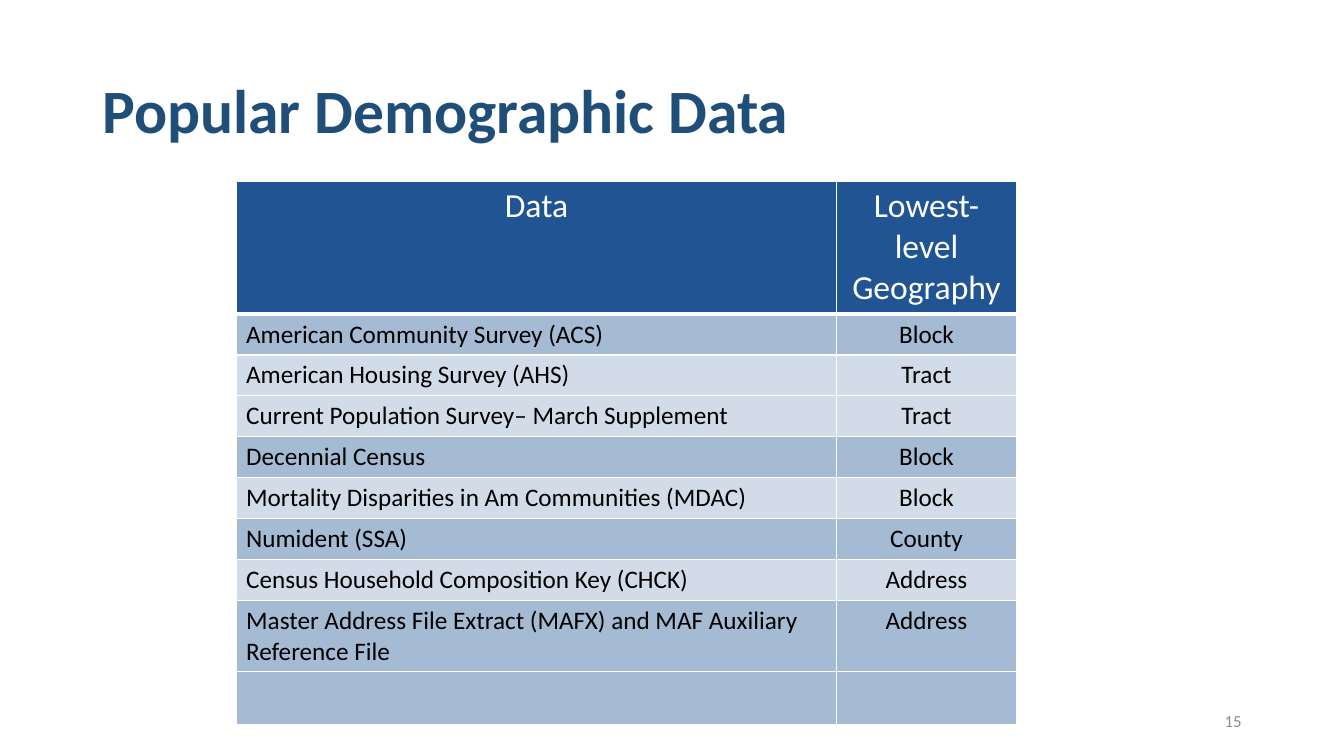
import pptx
import pptx.util
import pptx.dml.color
import pptx.enum.text
import pptx.oxml
from lxml import etree

Cm = pptx.util.Cm
Pt = pptx.util.Pt
Align = pptx.enum.text.PP_ALIGN
Anchor = pptx.enum.text.MSO_ANCHOR
NS = "http://schemas.openxmlformats.org/drawingml/2006/main"


def color(code):
    return pptx.dml.color.RGBColor.from_string(code)


def write(frame, text, align, size, code, bold=False):
    frame.text = text
    para = frame.paragraphs[0]
    para.alignment = align
    look = {"name": "Calibri", "size": Pt(size), "bold": bold}
    for key, value in look.items():
        setattr(para.font, key, value)
    para.font.color.rgb = color(code)
    return para


deck = pptx.Presentation()
deck.slide_width = Cm(33.87)
deck.slide_height = Cm(19.05)
slide = deck.slides.add_slide(deck.slide_layouts[5])

title = slide.shapes.title
place = {"left": Cm(2.33), "top": Cm(1.01), "width": Cm(29.21), "height": Cm(3.68)}
for key, value in place.items():
    setattr(title, key, value)
title.text_frame.vertical_anchor = Anchor.MIDDLE
head = write(title.text_frame, "Popular Demographic Data", Align.LEFT, 44, "1F4E79", True)
head.line_spacing = 0.9

rows = [
    ("Data", "Lowest-level Geography", 3.35, 100),
    ("American Community Survey (ACS)", "Block", 1.03, 40),
    ("American Housing Survey (AHS)", "Tract", 1.03, 20),
    ("Current Population Survey– March Supplement", "Tract", 1.03, 20),
    ("Decennial Census", "Block", 1.03, 40),
    ("Mortality Disparities in Am Communities (MDAC)", "Block", 1.03, 20),
    ("Numident (SSA)", "County", 1.03, 40),
    ("Census Household Composition Key (CHCK)", "Address", 1.03, 20),
    ("Master Address File Extract (MAFX) and MAF Auxiliary Reference File", "Address", 1.8, 40),
    ("", "", 1.32, 40),
]
high = sum(row[2] for row in rows)
frame = slide.shapes.add_table(len(rows), 2, Cm(5.95), Cm(4.56), Cm(19.66), Cm(high))
table = frame.table
for col, wide in zip(table.columns, (15.14, 4.52)):
    col.width = Cm(wide)

for r, (data, level, tall, alpha) in enumerate(rows):
    table.rows[r].height = Cm(tall)
    size, ink = (24, "FFFFFF") if r == 0 else (18, "000000")
    for c, text in enumerate((data, level)):
        cell = table.cell(r, c)
        align = Align.LEFT if r and c == 0 else Align.CENTER
        write(cell.text_frame, text, align, size, ink)
        props = cell._tc.get_or_add_tcPr()
        for side in ("lnL", "lnR", "lnT", "lnB"):
            width = 3 if r == 0 and side == "lnB" else 1
            props.append(pptx.oxml.parse_xml(
                f'<a:{side} xmlns:a="{NS}" w="{Pt(width)}"><a:solidFill>'
                f'<a:srgbClr val="FFFFFF"/></a:solidFill></a:{side}>'))
        cell.fill.solid()
        cell.fill.fore_color.rgb = color("205493")
        if alpha < 100:
            tint = props.find(f"{{{NS}}}solidFill/{{{NS}}}srgbClr")
            etree.SubElement(tint, f"{{{NS}}}alpha", val=str(alpha * 1000))

number = slide.shapes.add_textbox(Cm(23.92), Cm(17.66), Cm(7.62), Cm(1.01))
number.text_frame.word_wrap = True
number.text_frame.vertical_anchor = Anchor.MIDDLE
write(number.text_frame, "15", Align.RIGHT, 12, "8C8C8C")

deck.save("out.pptx")
